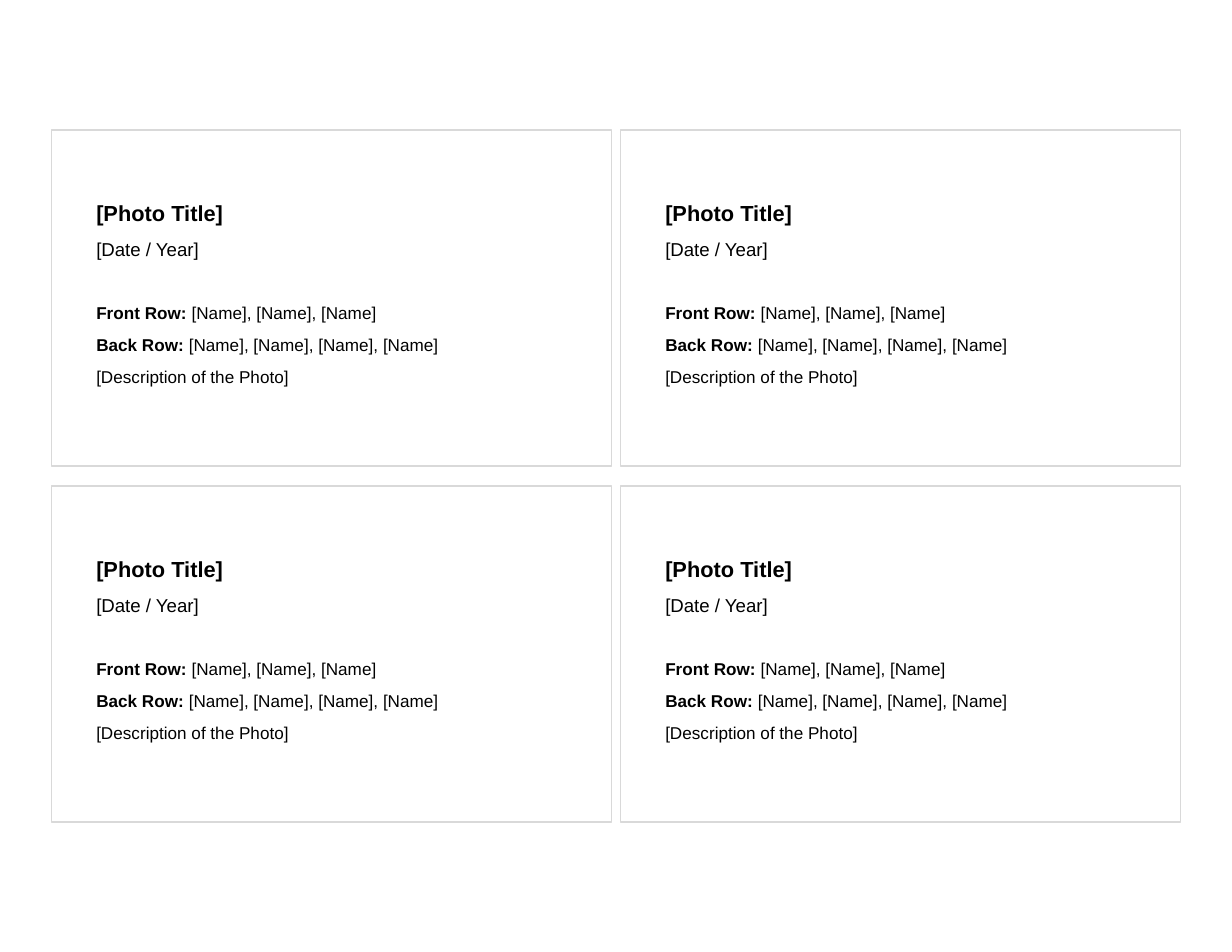
import itertools

import pptx
import pptx.dml.color
import pptx.enum.shapes
import pptx.enum.text
import pptx.util

WHITE = pptx.dml.color.RGBColor(0xFF, 0xFF, 0xFF)
BLACK = pptx.dml.color.RGBColor(0x00, 0x00, 0x00)
BORDER = pptx.dml.color.RGBColor(0xD9, 0xD9, 0xD9)

# Card grid, in inches
SLIDE_WIDTH, SLIDE_HEIGHT = 11, 8.5
COLUMNS, ROWS = 2, 2
CARD_WIDTH, CARD_HEIGHT = 5, 3
COLUMN_GAP, ROW_GAP = 0.08, 0.18
GRID_LEFT = (SLIDE_WIDTH - COLUMNS * CARD_WIDTH - COLUMN_GAP) / 2
GRID_TOP = (SLIDE_HEIGHT - ROWS * CARD_HEIGHT - ROW_GAP) / 2

LEFT = pptx.enum.text.PP_ALIGN.LEFT
JUSTIFY = pptx.enum.text.PP_ALIGN.JUSTIFY

# Each line: bold part, regular part, size, space after, alignment
CARD_LINES = [
    ("[Photo Title]", "", 14, 6, LEFT),
    ("", "[Date / Year]", 12, 26, LEFT),
    ("Front Row: ", "[Name], [Name], [Name]", 11, 6, LEFT),
    ("Back Row: ", "[Name], [Name], [Name], [Name]", 11, 6, JUSTIFY),
    ("", "[Description of the Photo]", 11, 6, JUSTIFY),
]


def write_line(para, bold_text, regular_text, size, space_after, alignment):
    para.alignment = alignment
    para.line_spacing = 1.1
    para.space_after = pptx.util.Pt(space_after)
    para.font.name = "Arial"
    para.font.size = pptx.util.Pt(size)
    para.font.color.rgb = BLACK
    for text, bold in ((bold_text, True), (regular_text, False)):
        if text:
            span = para.add_run()
            span.text = text
            span.font.bold = bold


def add_card(page, column, row):
    box = page.shapes.add_shape(
        pptx.enum.shapes.MSO_SHAPE.RECTANGLE,
        pptx.util.Inches(GRID_LEFT + column * (CARD_WIDTH + COLUMN_GAP)),
        pptx.util.Inches(GRID_TOP + row * (CARD_HEIGHT + ROW_GAP)),
        pptx.util.Inches(CARD_WIDTH),
        pptx.util.Inches(CARD_HEIGHT),
    )
    box.shadow.inherit = False
    box.fill.solid()
    box.fill.fore_color.rgb = WHITE
    box.line.color.rgb = BORDER
    box.line.width = pptx.util.Pt(1)

    # Text area
    frame = box.text_frame
    frame.word_wrap = True
    frame.vertical_anchor = pptx.enum.text.MSO_ANCHOR.TOP
    frame.margin_left = pptx.util.Inches(0.4)
    frame.margin_top = pptx.util.Inches(0.6)
    frame.margin_right = pptx.util.Inches(0.35)
    frame.margin_bottom = pptx.util.Inches(0.05)
    for index, line in enumerate(CARD_LINES):
        para = frame.add_paragraph() if index else frame.paragraphs[0]
        write_line(para, *line)


def main():
    deck = pptx.Presentation()
    deck.slide_width = pptx.util.Inches(SLIDE_WIDTH)
    deck.slide_height = pptx.util.Inches(SLIDE_HEIGHT)
    page = deck.slides.add_slide(deck.slide_layouts[6])

    # Photo caption cards
    for row, column in itertools.product(range(ROWS), range(COLUMNS)):
        add_card(page, column, row)

    deck.save("out.pptx")


if __name__ == "__main__":
    main()
